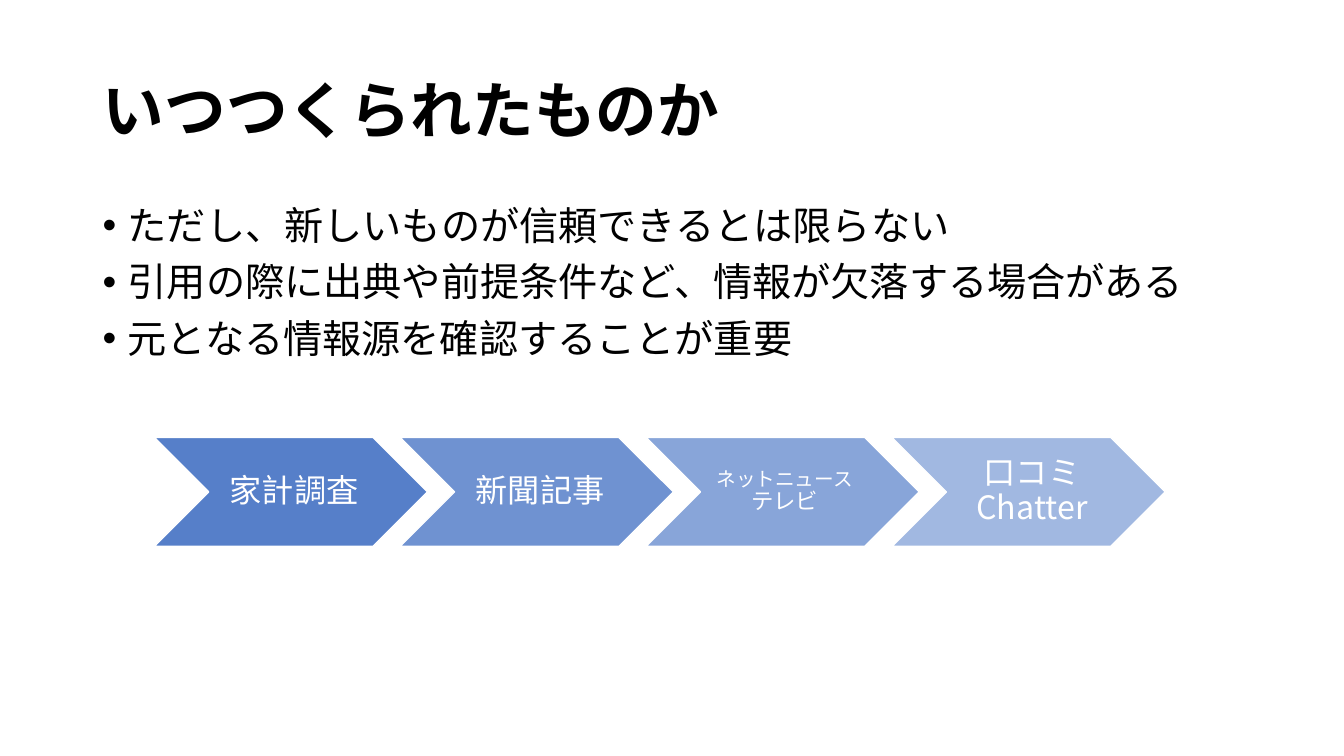
"""Build a slide on how information changes as it passes from source to source."""
import pptx
import pptx.dml.color
import pptx.enum.shapes
import pptx.enum.text
import pptx.oxml
import pptx.oxml.ns
import pptx.util
from pptx.dml.color import RGBColor
from pptx.util import Inches, Pt

TITLE = "いつつくられたものか"
POINTS = [
    "ただし、新しいものが信頼できるとは限らない",
    "引用の際に出典や前提条件など、情報が欠落する場合がある",
    "元となる情報源を確認することが重要",
]
STEPS = [
    {"lines": [("家計調査", 23)], "opacity": 90},
    {"lines": [("新聞記事", 23)], "opacity": 77},
    {"lines": [("ネットニュース", 14), ("テレビ", 16)], "opacity": 63},
    {"lines": [("口コミ", 23), ("Chatter", 23)], "opacity": 50},
]

FONT = "Noto Sans CJK JP"
BLACK = RGBColor(0x00, 0x00, 0x00)
WHITE = RGBColor(0xFF, 0xFF, 0xFF)
BLUE = RGBColor(0x44, 0x72, 0xC4)

WIDTH, HEIGHT = 13.33, 7.5
MARGIN, CONTENT_W = 0.92, 11.5
STEP_LEFT, STEP_TOP, STEP_W, STEP_H = 1.53, 4.34, 2.71, 1.08
STEP_PITCH = 0.9 * STEP_W


def element(tag, **attributes):
    el = pptx.oxml.parse_xml(f"<{tag} {pptx.oxml.ns.nsdecls('a')}/>")
    for name, value in attributes.items():
        el.set(name, str(value))
    return el


def format_paragraph(p, size, color, bold=False):
    p.line_spacing = 0.9
    p.font.size = Pt(size)
    p.font.bold = bold
    p.font.color.rgb = color
    p.font.name = FONT
    defaults = p._p.pPr.find(pptx.oxml.ns.qn("a:defRPr"))
    defaults.append(element("a:ea", typeface=FONT))
    return defaults


def add_title(slide):
    title = slide.shapes.title
    title.left, title.top = Inches(MARGIN), Inches(0.4)
    title.width, title.height = Inches(CONTENT_W), Inches(1.45)
    tf = title.text_frame
    tf.text = TITLE
    tf.auto_size = pptx.enum.text.MSO_AUTO_SIZE.NONE
    tf.vertical_anchor = pptx.enum.text.MSO_ANCHOR.MIDDLE
    p = tf.paragraphs[0]
    p.alignment = pptx.enum.text.PP_ALIGN.LEFT
    format_paragraph(p, 44, BLACK, bold=True)


def add_points(slide):
    box = slide.shapes.add_textbox(Inches(MARGIN), Inches(2), Inches(CONTENT_W), Inches(4.76))
    tf = box.text_frame
    tf.word_wrap = True
    tf.text = "\n".join(POINTS)
    for p in tf.paragraphs:
        p.space_before = Pt(10)
        defaults = format_paragraph(p, 28, BLACK)
        p._p.pPr.set("marL", str(Inches(0.25)))
        p._p.pPr.set("indent", str(-Inches(0.25)))
        defaults.addprevious(element("a:buFont", typeface="Arial"))
        defaults.addprevious(element("a:buChar", char="•"))


def add_step(slide, index, step):
    sp = slide.shapes.add_shape(
        pptx.enum.shapes.MSO_SHAPE.CHEVRON,
        Inches(STEP_LEFT + index * STEP_PITCH), Inches(STEP_TOP), Inches(STEP_W), Inches(STEP_H))
    sp.shadow.inherit = False
    sp.fill.solid()
    sp.fill.fore_color.rgb = BLUE
    color = sp._element.spPr.find(".//" + pptx.oxml.ns.qn("a:srgbClr"))
    color.append(element("a:alpha", val=step["opacity"] * 1000))
    sp.line.color.rgb = WHITE
    sp.line.width = Pt(1)

    tf = sp.text_frame
    tf.word_wrap = True
    tf.vertical_anchor = pptx.enum.text.MSO_ANCHOR.MIDDLE
    first_size = step["lines"][0][1]
    tf.margin_left = Inches(0.1 if first_size > 16 else 0.06)
    tf.margin_top = tf.margin_right = tf.margin_bottom = Inches(0.03 if first_size > 16 else 0.02)
    p = tf.paragraphs[0]
    p.alignment = pptx.enum.text.PP_ALIGN.CENTER
    format_paragraph(p, first_size, WHITE)
    for row, (text, size) in enumerate(step["lines"]):
        if row:
            p.add_line_break()
        r = p.add_run()
        r.text = text
        if size != first_size:
            r.font.size = Pt(size)


def main():
    prs = pptx.Presentation()
    prs.slide_width, prs.slide_height = Inches(WIDTH), Inches(HEIGHT)
    slide = prs.slides.add_slide(prs.slide_layouts[5])
    add_title(slide)
    add_points(slide)
    for index, step in enumerate(STEPS):
        add_step(slide, index, step)
    prs.save("out.pptx")


if __name__ == "__main__":
    main()
